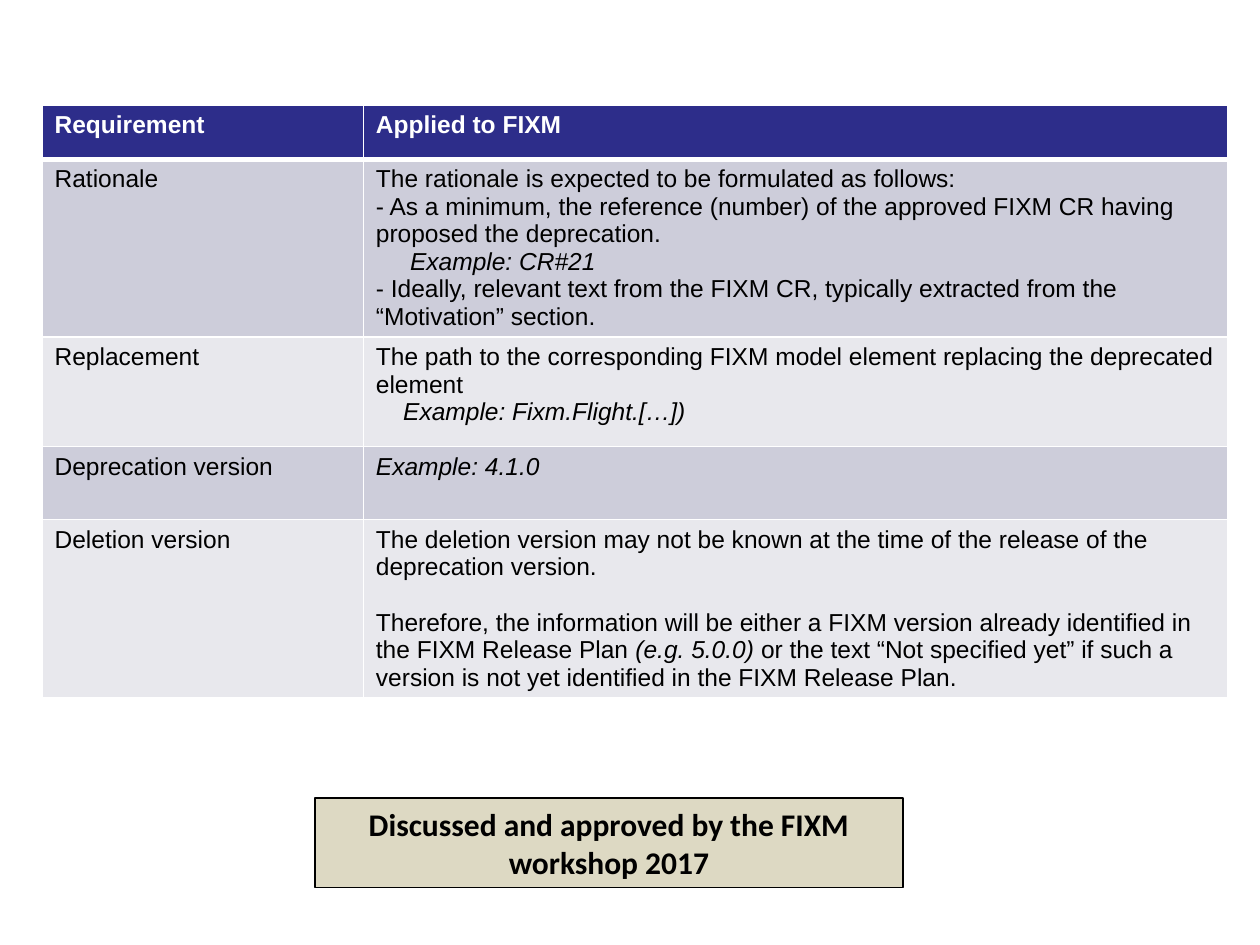
"""Build the slide on FIXM deprecation requirements."""
from dataclasses import dataclass

from lxml import etree
from pptx import Presentation
from pptx.dml.color import RGBColor
from pptx.enum.shapes import MSO_SHAPE
from pptx.enum.text import PP_ALIGN
from pptx.oxml.ns import qn
from pptx.util import Pt

RECT = MSO_SHAPE.RECTANGLE
CENTER = PP_ALIGN.CENTER
WHITE, BLACK = "FFFFFF", "000000"
NAVY, BANDS, BEIGE = "2D2D8A", ("CDCDDA", "E8E8ED"), "DDD9C3"
COLUMN_WIDTHS = (183.6, 493.9)


@dataclass(frozen=True)
class Run:
    text: str
    italic: bool = False


@dataclass(frozen=True)
class Para:
    runs: tuple[Run, ...]
    indent: float = 0
    before: float = 0


@dataclass(frozen=True)
class Row:
    height: float
    label: str
    paras: tuple[Para, ...]


def plain(text: str) -> Para:
    return Para((Run(text),))


def example(text: str, indent: float = 0) -> Para:
    return Para((Run(text, True),), indent)


ROWS = (
    Row(31, "Requirement", (plain("Applied to FIXM"),)),
    Row(60.5, "Rationale", (
        plain("The rationale is expected to be formulated as follows:"),
        plain("- As a minimum, the reference (number) of the approved FIXM CR "
              "having proposed the deprecation."),
        example("Example: CR#21", 19.5),
        plain("- Ideally, relevant text from the FIXM CR, typically extracted "
              "from the “Motivation” section."),
    )),
    Row(62.6, "Replacement", (
        plain("The path to the corresponding FIXM model element replacing the "
              "deprecated element"),
        example("Example: Fixm.Flight.[…])", 15.6),
    )),
    Row(41.8, "Deprecation version", (example("Example: 4.1.0"),)),
    Row(95.8, "Deletion version", (
        plain("The deletion version may not be known at the time of the release "
              "of the deprecation version."),
        Para((
            Run("Therefore, the information will be either a FIXM version already "
                "identified in the FIXM Release Plan "),
            Run("(e.g. 5.0.0) ", True),
            Run("or the text “Not specified yet” if such a version is not yet "
                "identified in the FIXM Release Plan."),
        ), before=16),
    )),
)


def rgb(value: str) -> RGBColor:
    return RGBColor.from_string(value)


def set_font(font, name: str, size: float, color: str, bold: bool) -> None:
    font.name, font.size, font.bold = name, Pt(size), bold
    font.color.rgb = rgb(color)


def set_border(cell, side: str, width: float) -> None:
    ln = etree.SubElement(cell._tc.get_or_add_tcPr(), qn(f"a:ln{side}"), w=str(Pt(width)))
    fill = etree.SubElement(ln, qn("a:solidFill"))
    etree.SubElement(fill, qn("a:srgbClr"), val=WHITE)


def fill_cell(cell, paras: tuple[Para, ...], row: int) -> None:
    header = row == 0
    widths = {"L": 1, "R": 1, "T": 3 if row == 1 else 1, "B": 3 if header else 1}
    for side, width in widths.items():
        set_border(cell, side, width)
    cell.fill.solid()
    cell.fill.fore_color.rgb = rgb(NAVY if header else BANDS[(row - 1) % 2])
    tf = cell.text_frame
    for i, para in enumerate(paras):
        p = tf.add_paragraph() if i else tf.paragraphs[0]
        set_font(p.font, "Arial", 14, WHITE if header else BLACK, header)
        if para.before:
            p.space_before = Pt(para.before)
        if para.indent:
            p._p.get_or_add_pPr().set("marL", str(Pt(para.indent)))
        for run in para.runs:
            r = p.add_run()
            r.text = run.text
            r.font.italic = run.italic


def add_requirements(s) -> None:
    frame = s.shapes.add_table(len(ROWS), len(COLUMN_WIDTHS), Pt(24), Pt(60),
                               Pt(sum(COLUMN_WIDTHS)), Pt(sum(row.height for row in ROWS)))
    table = frame.table
    for column, width in zip(table.columns, COLUMN_WIDTHS):
        column.width = Pt(width)
    for i, row in enumerate(ROWS):
        table.rows[i].height = Pt(row.height)
        fill_cell(table.cell(i, 0), (plain(row.label),), i)
        fill_cell(table.cell(i, 1), row.paras, i)


def add_approval(s) -> None:
    sp = s.shapes.add_shape(RECT, Pt(180), Pt(456), Pt(336), Pt(51))
    sp.shadow.inherit = False
    sp.fill.solid()
    sp.fill.fore_color.rgb = rgb(BEIGE)
    sp.line.color.rgb = rgb(BLACK)
    sp.line.width = Pt(0.75)
    tf = sp.text_frame
    tf.word_wrap = True
    p = tf.paragraphs[0]
    p.text = "Discussed and approved by the FIXM workshop 2017"
    p.alignment = CENTER
    set_font(p.font, "Calibri", 18, BLACK, True)


def main() -> None:
    prs = Presentation()
    prs.slide_width, prs.slide_height = Pt(720), Pt(540)
    s = prs.slides.add_slide(prs.slide_layouts[6])
    add_requirements(s)
    add_approval(s)
    prs.save("out.pptx")


if __name__ == "__main__":
    main()
